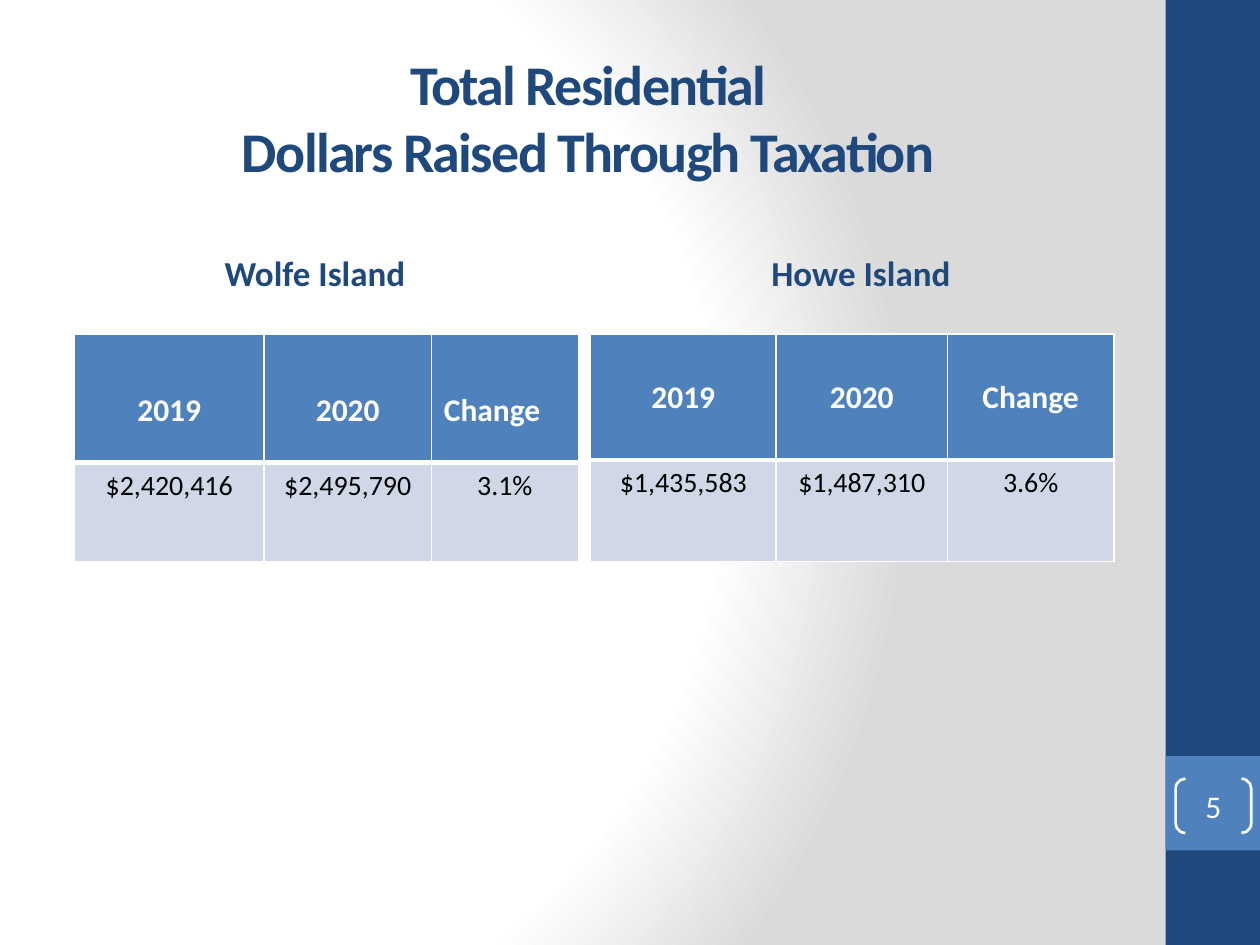
from dataclasses import dataclass

from lxml import etree
from pptx import Presentation
from pptx.dml.color import RGBColor
from pptx.enum import shapes, text
from pptx.oxml.ns import qn
from pptx.util import Pt

FONT = "Calibri"
COLORS = {"navy": "1F497D", "blue": "4F81BD", "pale": "D0D8E8",
          "white": "FFFFFF", "black": "000000", "grey": "DADADA"}
CENTER, LEFT = text.PP_ALIGN.CENTER, text.PP_ALIGN.LEFT
MIDDLE, BOTTOM = text.MSO_ANCHOR.MIDDLE, text.MSO_ANCHOR.BOTTOM
YEARS = ("2019", "2020", "Change")


@dataclass
class IslandTable:
    name: str
    heading_left: float
    left: float
    columns: tuple[float, ...]
    rows: tuple[float, ...]
    header_inset: float
    header_aligns: tuple
    values: tuple[str, ...]


ISLANDS = (
    IslandTable("Wolfe Island", 36, 42.5, (108.5, 95.5, 84), (73.5, 56.5), 32.9,
                (CENTER, CENTER, LEFT), ("$2,420,416", "$2,495,790", "3.1%")),
    IslandTable("Howe Island", 348, 337.5, (106, 98, 95), (72, 58), 25.6,
                (CENTER, CENTER, CENTER), ("$1,435,583", "$1,487,310", "3.6%")),
)


def rgb(name: str) -> RGBColor:
    return RGBColor.from_string(COLORS[name])


def write(tf, content: str, *, size: float, color: str, bold: bool = False,
          align=CENTER, anchor=None, spacing: float = 0, before: float = 0) -> None:
    """Fill a text frame with one paragraph; a vertical tab breaks the line."""
    tf.word_wrap = True
    if anchor is not None:
        tf.vertical_anchor = anchor
    p = tf.paragraphs[0]
    p.text = content
    p.alignment = align
    if before:
        p.space_before = Pt(before)
    for r in p.runs:
        r.font.name, r.font.size, r.font.bold = FONT, Pt(size), bold
        r.font.color.rgb = rgb(color)
        if spacing:
            r.font._element.set("spc", str(round(spacing * 100)))


def add_label(s, box: tuple[float, ...], content: str, **fmt) -> None:
    write(s.shapes.add_textbox(*map(Pt, box)).text_frame, content, **fmt)


def add_block(s, box: tuple[float, ...], color: str) -> None:
    sp = s.shapes.add_shape(shapes.MSO_SHAPE.RECTANGLE, *map(Pt, box))
    sp.shadow.inherit = False
    sp.fill.solid()
    sp.fill.fore_color.rgb = rgb(color)
    sp.line.fill.background()


def add_color(parent, color: str) -> None:
    etree.SubElement(parent, qn("a:srgbClr"), val=COLORS[color])


def set_background(s) -> None:
    """Circular gradient, white at the left and grey at the right."""
    s.background.fill.gradient()
    grad = s.element.find(".//" + qn("a:gradFill"))
    for child in list(grad):
        grad.remove(child)
    stops = etree.SubElement(grad, qn("a:gsLst"))
    for percent, color in ((0, "white"), (75, "white"), (100, "grey")):
        add_color(etree.SubElement(stops, qn("a:gs"), pos=str(percent * 1000)), color)
    circle = etree.SubElement(grad, qn("a:path"), attrib={"path": "circle"})
    etree.SubElement(circle, qn("a:fillToRect"), l="20000", t="50000", r="100000", b="50000")


def style_cell(cell, fill: str, borders: dict[str, float]) -> None:
    cell.fill.solid()
    cell.fill.fore_color.rgb = rgb(fill)
    tc_pr = cell._tc.get_or_add_tcPr()
    for i, (side, width) in enumerate(borders.items()):
        ln = etree.Element(qn(f"a:ln{side}"), w=str(Pt(width)))
        add_color(etree.SubElement(ln, qn("a:solidFill")), "white")
        tc_pr.insert(i, ln)


def add_island(s, island: IslandTable) -> None:
    add_label(s, (island.heading_left, 121, 288, 50.4), island.name,
              size=20, color="navy", bold=True, anchor=BOTTOM, before=4)
    table = s.shapes.add_table(2, 3, Pt(island.left), Pt(190.8),
                               Pt(sum(island.columns)), Pt(sum(island.rows))).table
    for row, height in zip(table.rows, island.rows):
        row.height = Pt(height)
    for col, width in enumerate(island.columns):
        table.columns[col].width = Pt(width)
        header, value = table.cell(0, col), table.cell(1, col)
        header.margin_top = Pt(island.header_inset)
        write(header.text_frame, YEARS[col], size=18, color="white", bold=True,
              align=island.header_aligns[col])
        write(value.text_frame, island.values[col], size=16, color="black")
        style_cell(header, "blue", {"L": 1, "R": 1, "T": 1, "B": 3})
        style_cell(value, "pale", {"L": 1, "R": 1, "T": 3, "B": 1})


def add_page_number(s, number: str) -> None:
    sp = s.shapes.add_shape(shapes.MSO_SHAPE.DOUBLE_BRACKET,
                            Pt(671.8), Pt(445), Pt(43.2), Pt(31))
    sp.adjustments[0] = 0.18
    sp.shadow.inherit = False
    sp.fill.background()
    sp.line.color.rgb = rgb("white")
    sp.line.width = Pt(1.5)
    tf = sp.text_frame
    tf.margin_left = tf.margin_right = tf.margin_top = tf.margin_bottom = 0
    write(tf, number, size=18, color="white", anchor=MIDDLE)


def main() -> None:
    prs = Presentation()
    prs.slide_width, prs.slide_height = Pt(720), Pt(540)
    s = prs.slides.add_slide(prs.slide_layouts[6])
    set_background(s)
    add_block(s, (666, 0, 54, 540), "navy")
    add_block(s, (666, 432, 54, 54), "blue")
    add_label(s, (36, 21.6, 600, 90), "Total Residential\vDollars Raised Through Taxation",
              size=32, color="navy", bold=True, anchor=MIDDLE, spacing=-1)
    for island in ISLANDS:
        add_island(s, island)
    add_page_number(s, "5")
    prs.save("out.pptx")


if __name__ == "__main__":
    main()
